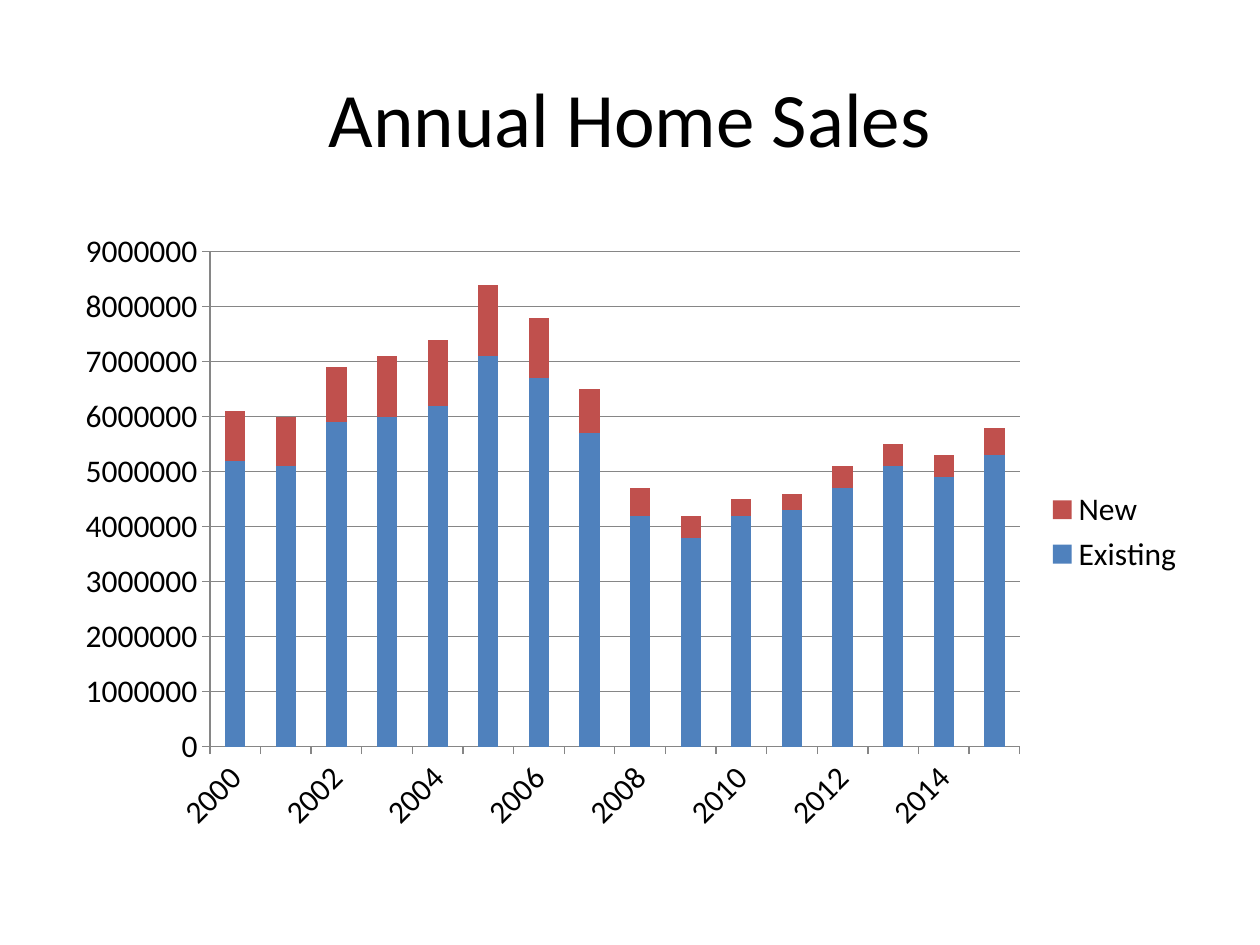
from dataclasses import dataclass

from pptx import Presentation
from pptx import util as u
from pptx.chart.data import CategoryChartData
from pptx.dml.color import RGBColor
from pptx.enum import chart as ch
from pptx.enum import text


@dataclass(frozen=True)
class Theme:
    font: str = "Calibri"
    title_size: int = 44
    chart_size: int = 18
    line_width: float = 0.75
    ink: RGBColor = RGBColor(0x00, 0x00, 0x00)
    axis: RGBColor = RGBColor(0x86, 0x86, 0x86)
    existing: RGBColor = RGBColor(0x4F, 0x81, 0xBD)
    new: RGBColor = RGBColor(0xC0, 0x50, 0x4D)


THEME = Theme()
MILLION = 1_000_000
YEARS = range(2000, 2016)
# Sales in millions of homes
SALES = {
    "Existing": (5.2, 5.1, 5.9, 6.0, 6.2, 7.1, 6.7, 5.7,
                 4.2, 3.8, 4.2, 4.3, 4.7, 5.1, 4.9, 5.3),
    "New": (0.9, 0.9, 1.0, 1.1, 1.2, 1.3, 1.1, 0.8,
            0.5, 0.4, 0.3, 0.3, 0.4, 0.4, 0.4, 0.5),
}
SERIES_COLORS = (THEME.existing, THEME.new)
TITLE_BOX = (u.Cm(1.27), u.Cm(0.76), u.Cm(22.86), u.Cm(3.18))
CHART_BOX = (u.Cm(1.27), u.Cm(4.44), u.Cm(22.86), u.Cm(12.57))


def set_font(font, size):
    font.name = THEME.font
    font.size = u.Pt(size)
    font.color.rgb = THEME.ink


def set_line(line):
    line.color.rgb = THEME.axis
    line.width = u.Pt(THEME.line_width)


def place_title(slide, box, wording):
    sp = slide.shapes.title
    sp.left, sp.top, sp.width, sp.height = box
    tf = sp.text_frame
    tf.text = wording
    tf.vertical_anchor = text.MSO_ANCHOR.MIDDLE
    p = tf.paragraphs[0]
    p.alignment = text.PP_ALIGN.CENTER
    set_font(p.runs[0].font, THEME.title_size)


def format_axis(axis):
    axis.major_tick_mark = ch.XL_TICK_MARK.OUTSIDE
    axis.minor_tick_mark = ch.XL_TICK_MARK.NONE
    set_line(axis.format.line)
    set_font(axis.tick_labels.font, THEME.chart_size)


def place_sales_chart(slide, box):
    data = CategoryChartData(number_format="General")
    data.categories = YEARS
    for name, values in SALES.items():
        data.add_series(name, [round(v * MILLION) for v in values])
    chart = slide.shapes.add_chart(
        ch.XL_CHART_TYPE.COLUMN_STACKED, *box, data).chart
    set_font(chart.font, THEME.chart_size)
    chart.has_title = False

    chart.has_legend = True
    chart.legend.position = ch.XL_LEGEND_POSITION.RIGHT
    chart.legend.include_in_layout = False
    set_font(chart.legend.font, THEME.chart_size)

    plot = chart.plots[0]
    plot.gap_width, plot.overlap = 150, 100
    plot.vary_by_categories = False
    for series, color in zip(plot.series, SERIES_COLORS):
        series.format.fill.solid()
        series.format.fill.fore_color.rgb = color

    for axis in (chart.category_axis, chart.value_axis):
        format_axis(axis)
    chart.value_axis.minimum_scale = 0
    chart.value_axis.maximum_scale = 9 * MILLION
    chart.value_axis.major_unit = MILLION
    chart.value_axis.has_major_gridlines = True
    set_line(chart.value_axis.major_gridlines.format.line)


def main():
    prs = Presentation()
    prs.slide_width, prs.slide_height = u.Cm(25.4), u.Cm(19.05)
    slide = prs.slides.add_slide(prs.slide_layouts.get_by_name("Title Only"))
    place_title(slide, TITLE_BOX, "Annual Home Sales")
    place_sales_chart(slide, CHART_BOX)
    prs.save("out.pptx")


if __name__ == "__main__":
    main()
